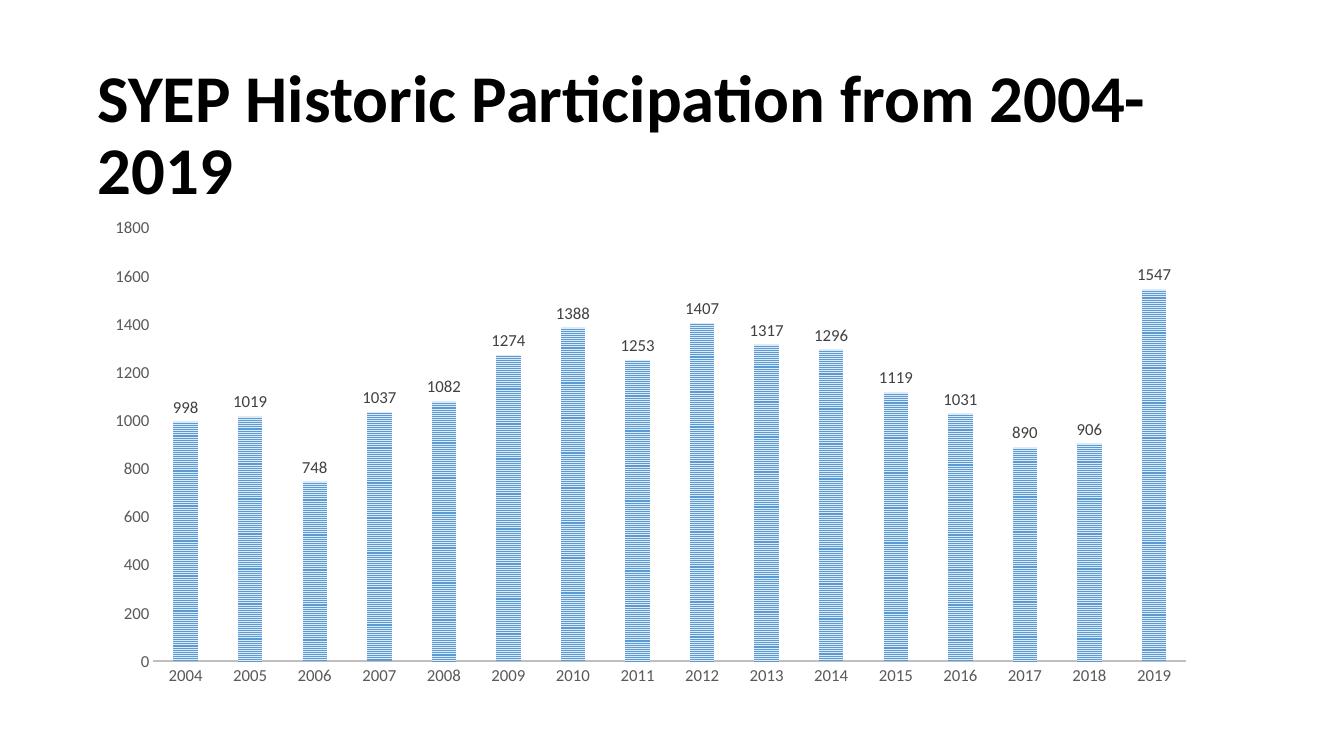
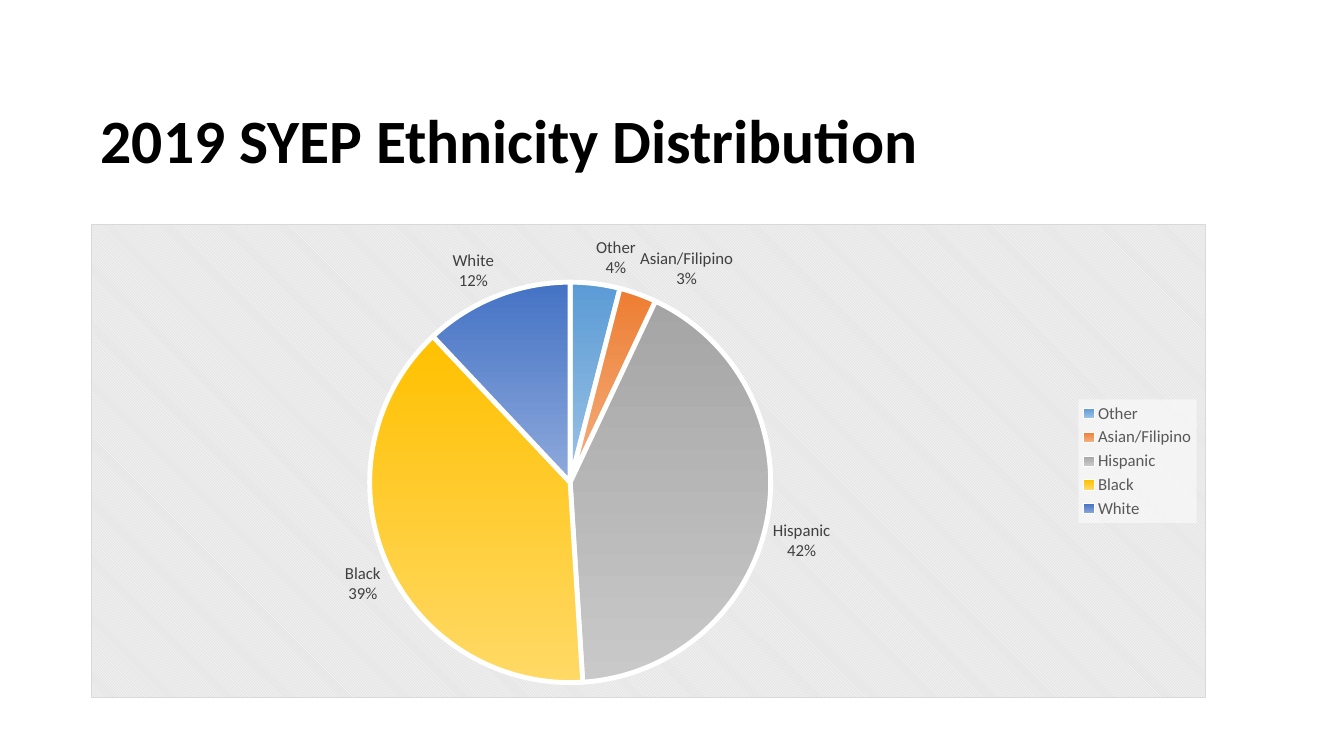
from dataclasses import dataclass

from lxml.etree import SubElement
from pptx import Presentation
from pptx.chart.data import CategoryChartData
from pptx.dml.color import RGBColor
from pptx.enum.chart import (XL_CHART_TYPE, XL_LABEL_POSITION,
                             XL_LEGEND_POSITION, XL_TICK_MARK)
from pptx.enum.dml import MSO_PATTERN
from pptx.enum.text import MSO_ANCHOR, MSO_AUTO_SIZE, PP_ALIGN
from pptx.oxml import parse_xml
from pptx.oxml.ns import nsdecls, qn
from pptx.util import Inches, Pt


@dataclass(frozen=True)
class Theme:
    font: str = "Calibri"
    ink: str = "000000"
    label: str = "404040"
    axis: str = "595959"
    axis_line: str = "BFBFBF"
    white: str = "FFFFFF"
    panel: str = "E6E6E6"
    panel_border: str = "D9D9D9"
    bar: str = "5B9BD5"
    bar_light: str = "DEEBF7"
    slices: tuple = (("5B9BD5", "9DC3E6"), ("ED7D31", "F4B183"),
                     ("A5A5A5", "C9C9C9"), ("FFC000", "FFD966"),
                     ("4472C4", "8FAADC"))
    title_size: float = 44
    long_title_size: float = 47.7
    chart_size: float = 10
    label_size: float = 12


THEME = Theme()
SLIDE_SIZE = (Inches(13.333), Inches(7.5))
TITLE_ONLY = 5

PARTICIPANTS = (998, 1019, 748, 1037, 1082, 1274, 1388, 1253,
                1407, 1317, 1296, 1119, 1031, 890, 906, 1547)
YEARS = [str(year) for year in range(2004, 2004 + len(PARTICIPANTS))]
ETHNICITY = {"Other": 4, "Asian/Filipino": 3, "Hispanic": 42,
             "Black": 39, "White": 12}


def rgb(code):
    return RGBColor.from_string(code)


def region(left, top, width, height):
    """Turn percentages of the slide into a box."""
    return [int(SLIDE_SIZE[i % 2] * share / 100)
            for i, share in enumerate((left, top, width, height))]


def style_font(font, size=THEME.label_size, color=THEME.axis, bold=False):
    font.name, font.size, font.bold = THEME.font, Pt(size), bold
    font.color.rgb = rgb(color)


def write_text(frame, text, align=PP_ALIGN.LEFT, anchor=MSO_ANCHOR.MIDDLE,
               line_spacing=0.9, **font_format):
    frame.word_wrap = True
    frame.auto_size = MSO_AUTO_SIZE.NONE
    frame.vertical_anchor = anchor
    paragraph = frame.paragraphs[0]
    paragraph.alignment, paragraph.line_spacing = align, line_spacing
    run = paragraph.add_run()
    run.text = text
    style_font(run.font, **font_format)


def add_titled_slide(deck, title, box, size):
    slide = deck.slides.add_slide(deck.slide_layouts[TITLE_ONLY])
    heading = slide.shapes.title
    heading.left, heading.top, heading.width, heading.height = box
    write_text(heading.text_frame, title, size=size, color=THEME.ink, bold=True)
    return slide


def add_single_series_chart(slide, kind, box, categories, values, plot_shares):
    data = CategoryChartData()
    data.categories = categories
    data.add_series("Series 1", values)
    chart = slide.shapes.add_chart(kind, *box, data).chart
    chart.has_title = chart.has_legend = False
    style_font(chart.font, THEME.chart_size, THEME.ink)
    place_plot(chart, plot_shares)
    return chart


def place_plot(chart, shares):
    """Fix the inner plot area as shares of the chart."""
    area = chart._chartSpace.find(".//" + qn("c:plotArea"))
    for old in area.findall(qn("c:layout")):
        area.remove(old)
    layout = parse_xml(f"<c:layout {nsdecls('c')}/>")
    manual = SubElement(layout, qn("c:manualLayout"))
    settings = [("layoutTarget", "inner"), ("xMode", "edge"), ("yMode", "edge")]
    for name, value in settings + list(zip("xywh", shares)):
        SubElement(manual, qn(f"c:{name}")).set("val", str(value))
    area.insert(0, layout)


def add_background(parent, fill, line="<a:ln><a:noFill/></a:ln>"):
    """Give a chart or legend its fill and outline, ahead of its text style."""
    parent.find(qn("c:txPr")).addprevious(
        parse_xml(f"<c:spPr {nsdecls('c', 'a')}>{fill}{line}</c:spPr>"))


def solid(color, alpha=100):
    return (f'<a:solidFill><a:srgbClr val="{color}">'
            f'<a:alpha val="{alpha * 1000}"/></a:srgbClr></a:solidFill>')


def label_points(series):
    labels = series.data_labels
    style_font(labels.font, color=THEME.label)
    labels.position = XL_LABEL_POSITION.OUTSIDE_END
    return labels


def style_axis(axis):
    axis.has_major_gridlines = False
    axis.major_tick_mark = axis.minor_tick_mark = XL_TICK_MARK.NONE
    style_font(axis.tick_labels.font)


def participation_chart(slide, box):
    chart = add_single_series_chart(
        slide, XL_CHART_TYPE.COLUMN_CLUSTERED, box, YEARS, PARTICIPANTS,
        (0.05, 0.04, 0.93, 0.89))
    plot = chart.plots[0]
    plot.gap_width, plot.overlap = 164, -22
    plot.vary_by_categories = False

    # Striped bars with their values
    bars = plot.series[0]
    stripes = bars.format.fill
    stripes.patterned()
    stripes.pattern = MSO_PATTERN.NARROW_HORIZONTAL
    stripes.fore_color.rgb = rgb(THEME.bar)
    stripes.back_color.rgb = rgb(THEME.bar_light)
    label_points(bars).show_value = True

    # Axes
    years, people = chart.category_axis, chart.value_axis
    for axis in (years, people):
        style_axis(axis)
    years.format.line.color.rgb = rgb(THEME.axis_line)
    years.format.line.width = Pt(1.5)
    people.format.line.fill.background()
    people.minimum_scale, people.maximum_scale, people.major_unit = 0, 1800, 200


def ethnicity_chart(slide, box):
    chart = add_single_series_chart(
        slide, XL_CHART_TYPE.PIE, box, list(ETHNICITY), ETHNICITY.values(),
        (0.25, 0.12, 0.36, 0.85))
    plot = chart.plots[0]
    plot.vary_by_categories = True

    # Striped panel
    add_background(
        chart._chartSpace,
        f'<a:pattFill prst="dkDnDiag"><a:fgClr><a:srgbClr val="{THEME.white}"/>'
        f'</a:fgClr><a:bgClr><a:srgbClr val="{THEME.panel}"/></a:bgClr></a:pattFill>',
        f'<a:ln w="{Pt(0.75)}">{solid(THEME.panel_border)}</a:ln>')

    # Graded slices, divided by white lines
    groups = plot.series[0]
    for index, shades in enumerate(THEME.slices):
        look = groups.points[index].format
        look.fill.gradient()
        look.fill.gradient_angle = 270
        for stop, shade, position in zip(look.fill.gradient_stops, shades, (0, 1)):
            stop.color.rgb, stop.position = rgb(shade), position
        look.line.color.rgb = rgb(THEME.white)
        look.line.width = Pt(3.5)

    # Name above share
    labels = label_points(groups)
    labels.show_value = False
    labels.show_category_name = labels.show_percentage = True
    labels.number_format, labels.number_format_is_linked = "0%", False
    separator = parse_xml(f"<c:separator {nsdecls('c')}>\n</c:separator>")
    labels._element.find(qn("c:showBubbleSize")).addnext(separator)

    # Legend on a translucent white box
    chart.has_legend = True
    legend = chart.legend
    legend.position = XL_LEGEND_POSITION.RIGHT
    legend.include_in_layout = False
    style_font(legend.font)
    add_background(legend._element, solid(THEME.white, alpha=50))


def main():
    deck = Presentation()
    deck.slide_width, deck.slide_height = SLIDE_SIZE

    history = add_titled_slide(
        deck, "SYEP Historic Participation from 2004-2019",
        region(6.52, 11.2, 83.4, 13.73), THEME.long_title_size)
    participation_chart(history, region(7.28, 27.6, 82.65, 64.4))

    distribution = add_titled_slide(
        deck, "2019 SYEP Ethnicity Distribution",
        region(6.75, 11.73, 70.5, 14.53), THEME.title_size)
    ethnicity_chart(distribution, region(6.75, 29.6, 82.95, 62.8))

    deck.save("out.pptx")


if __name__ == "__main__":
    main()
